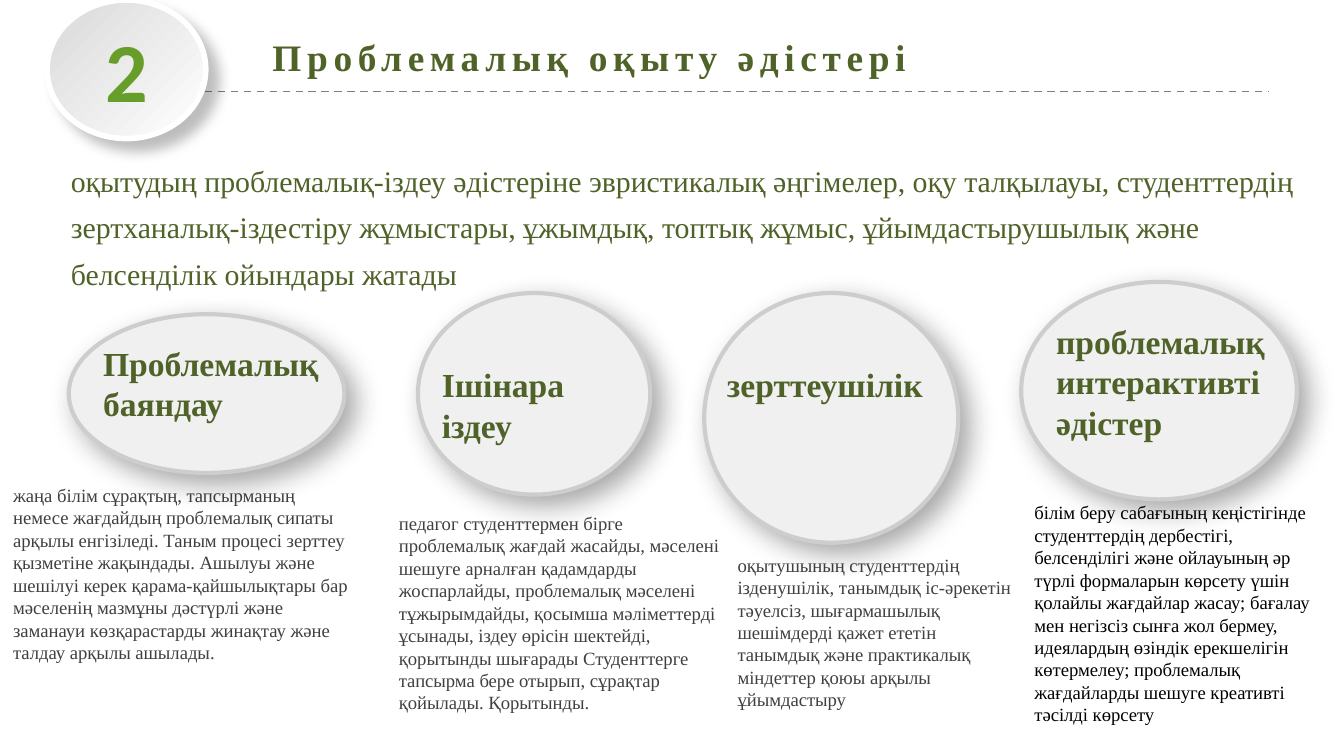
from dataclasses import dataclass

import lxml.etree
import pptx
import pptx.dml.color
import pptx.enum.dml
import pptx.enum.shapes
import pptx.enum.text
import pptx.oxml.ns
import pptx.util


@dataclass(frozen=True)
class Theme:
    """Colours, fonts and type sizes of the deck."""
    green: str = "4F6228"
    number: str = "679E2A"
    grey: str = "404040"
    black: str = "000000"
    rule: str = "808080"
    ring: str = "CDCDCD"
    white: str = "FFFFFF"
    oval: tuple = ("F0F0F0", "F1F1F1")
    badge: tuple = ("D9D9D9", "FFFFFF")
    serif: str = "Times New Roman"
    sans: str = "Calibri"
    title_size: int = 20
    intro_size: int = 16
    label_size: int = 18
    body_size: int = 10
    number_size: int = 45


@dataclass(frozen=True)
class Box:
    """A rectangle in centimetres."""
    left: float
    top: float
    width: float
    height: float

    def inner(self, left, top, width, height):
        """Return a box placed relative to this one."""
        return Box(self.left + left, self.top + top, width, height)

    def lengths(self):
        """Return the four sides as slide lengths."""
        return [pptx.util.Cm(side) for side in (self.left, self.top, self.width, self.height)]


THEME = Theme()

METHODS = [
    (Box(1.3, 5.94, 5.21, 3), (0.4, 0.41, 4.65, 1.8), (-1.3, 3.08, 6.88, 3.68), THEME.grey,
     "Проблемалық баяндау",
     "жаңа білім сұрақтың, тапсырманың немесе жағдайдың проблемалық сипаты арқылы "
     "енгізіледі. Таным процесі зерттеу қызметіне жақындады. Ашылуы және шешілуі керек "
     "қарама-қайшылықтары бар мәселенің мазмұны дәстүрлі және заманауи көзқарастарды "
     "жинақтау және талдау арқылы ашылады."),
    (Box(7.9, 5.54, 4.39, 3.81), (0.2, 1.22, 3.81, 1.8), (-0.61, 4.01, 6.6, 4.11), THEME.grey,
     "Ішінара іздеу",
     "педагог студенттермен бірге проблемалық жағдай жасайды, мәселені шешуге арналған "
     "қадамдарды жоспарлайды, проблемалық мәселені тұжырымдайды, қосымша мәліметтерді "
     "ұсынады, іздеу өрісін шектейді, қорытынды шығарады Студенттерге тапсырма бере "
     "отырып, сұрақтар қойылады. Қорытынды."),
    (Box(13.31, 5.54, 4.8, 4.72), (0.18, 1.22, 4.3, 1.02), (0.38, 4.8, 5.79, 3.25), THEME.grey,
     "зерттеушілік",
     "оқытушының студенттердің ізденушілік, танымдық іс-әрекетін тәуелсіз, шығармашылық "
     "шешімдерді қажет ететін танымдық және практикалық міндеттер қоюы арқылы ұйымдастыру"),
    (Box(19.3, 5.33, 5.21, 4.11), (0.41, 0.61, 4.8, 2.57), (0, 4.02, 6.1, 4.52), THEME.black,
     "проблемалық интерактивті әдістер",
     "білім беру сабағының кеңістігінде студенттердің дербестігі, белсенділігі және "
     "ойлауының әр түрлі формаларын көрсету үшін қолайлы жағдайлар жасау; бағалау мен "
     "негізсіз сынға жол бермеу, идеялардың өзіндік ерекшелігін көтермелеу; проблемалық "
     "жағдайларды шешуге креативті тәсілді көрсету"),
]


def rgb(code):
    """Turn a hex code into a colour."""
    return pptx.dml.color.RGBColor.from_string(code)


def write(shape, text, size, colour, font=THEME.serif, bold=False):
    """Write one styled paragraph into a shape and return it."""
    shape.text_frame.word_wrap = True
    para = shape.text_frame.paragraphs[0]
    para.add_run().text = text
    para.font.name = font
    para.font.size = pptx.util.Pt(size)
    para.font.bold = bold
    para.font.color.rgb = rgb(colour)
    return para


def add_text(page, box, *style, **options):
    """Add a text box with one styled paragraph."""
    return write(page.shapes.add_textbox(*box.lengths()), *style, **options)


def add_effects(parent, blur, distance, opacity):
    """Add a soft black shadow that falls to the lower right."""
    name = pptx.oxml.ns.qn
    shadow = lxml.etree.SubElement(
        parent, name("a:outerShdw"), blurRad=str(pptx.util.Pt(blur)),
        dist=str(pptx.util.Pt(distance)), dir="2700000", algn="tl", rotWithShape="0")
    colour = lxml.etree.SubElement(shadow, name("a:srgbClr"), val=THEME.black)
    lxml.etree.SubElement(colour, name("a:alpha"), val=str(opacity * 1000))


def add_oval(page, box, shades, ring, ring_width, shadow):
    """Add a shaded ellipse with a ring and a shadow."""
    oval = page.shapes.add_shape(pptx.enum.shapes.MSO_SHAPE.OVAL, *box.lengths())
    oval.fill.gradient()
    oval.fill.gradient_angle = 315
    for stop, shade in zip(oval.fill.gradient_stops, shades):
        stop.color.rgb = rgb(shade)
    oval.line.color.rgb = rgb(ring)
    oval.line.width = pptx.util.Pt(ring_width)
    oval.shadow.inherit = False
    add_effects(oval._element.spPr.find(pptx.oxml.ns.qn("a:effectLst")), *shadow)
    return oval


def add_header(page, box, number, title):
    """Add the dashed rule, the spaced title and the number badge."""
    rule = box.inner(1.42, 1.73, 22.56, 0)
    left, top, width, _ = rule.lengths()
    line = page.shapes.add_connector(
        pptx.enum.shapes.MSO_CONNECTOR.STRAIGHT, left, top, left + width, top)
    line.line.color.rgb = rgb(THEME.rule)
    line.line.width = pptx.util.Pt(1)
    line.line.dash_style = pptx.enum.dml.MSO_LINE.DASH
    lxml.etree.SubElement(line._element.spPr, pptx.oxml.ns.qn("a:effectLst"))

    para = add_text(page, box.inner(4.9, 0.53, 20, 1.12), title,
                    THEME.title_size, THEME.green, bold=True)
    para.runs[0].font._element.set("spc", "300")

    badge = add_oval(page, box.inner(0.89, 0, 3, 2.62), THEME.badge, THEME.white, 3, (7, 8, 25))
    frame = badge.text_frame
    frame.margin_left = frame.margin_right = pptx.util.Cm(0.18)
    frame.margin_top = frame.margin_bottom = pptx.util.Cm(0.1)
    frame.vertical_anchor = pptx.enum.text.MSO_ANCHOR.MIDDLE
    para = write(badge, number, THEME.number_size, THEME.number, THEME.sans, True)
    para.alignment = pptx.enum.text.PP_ALIGN.CENTER


def add_intro(page, box, text):
    """Add the widely spaced opening paragraph."""
    add_text(page, box, text, THEME.intro_size, THEME.green).line_spacing = 1.3


def add_method(page, box, label_place, body_place, body_colour, label, body):
    """Add one method: its description, oval and label."""
    add_text(page, box.inner(*body_place), body, THEME.body_size, body_colour)
    add_oval(page, box, THEME.oval, THEME.ring, 2.25, (15, 7, 35))
    add_text(page, box.inner(*label_place), label, THEME.label_size, THEME.green, bold=True)


def main():
    """Build the slide and save the deck."""
    deck = pptx.Presentation()
    deck.slide_width = pptx.util.Cm(25.4)
    deck.slide_height = pptx.util.Cm(14.29)
    page = deck.slides.add_slide(deck.slide_layouts[6])
    add_header(page, Box(0, 0, 25.4, 2.62), "2", "Проблемалық оқыту әдістері")
    add_intro(page, Box(1.09, 2.74, 23.8, 2.84),
              "оқытудың проблемалық-іздеу әдістеріне эвристикалық әңгімелер, оқу талқылауы, "
              "студенттердің зертханалық-іздестіру жұмыстары, ұжымдық, топтық жұмыс, "
              "ұйымдастырушылық және белсенділік ойындары жатады")
    for method in METHODS:
        add_method(page, *method)
    deck.save("out.pptx")


if __name__ == "__main__":
    main()
